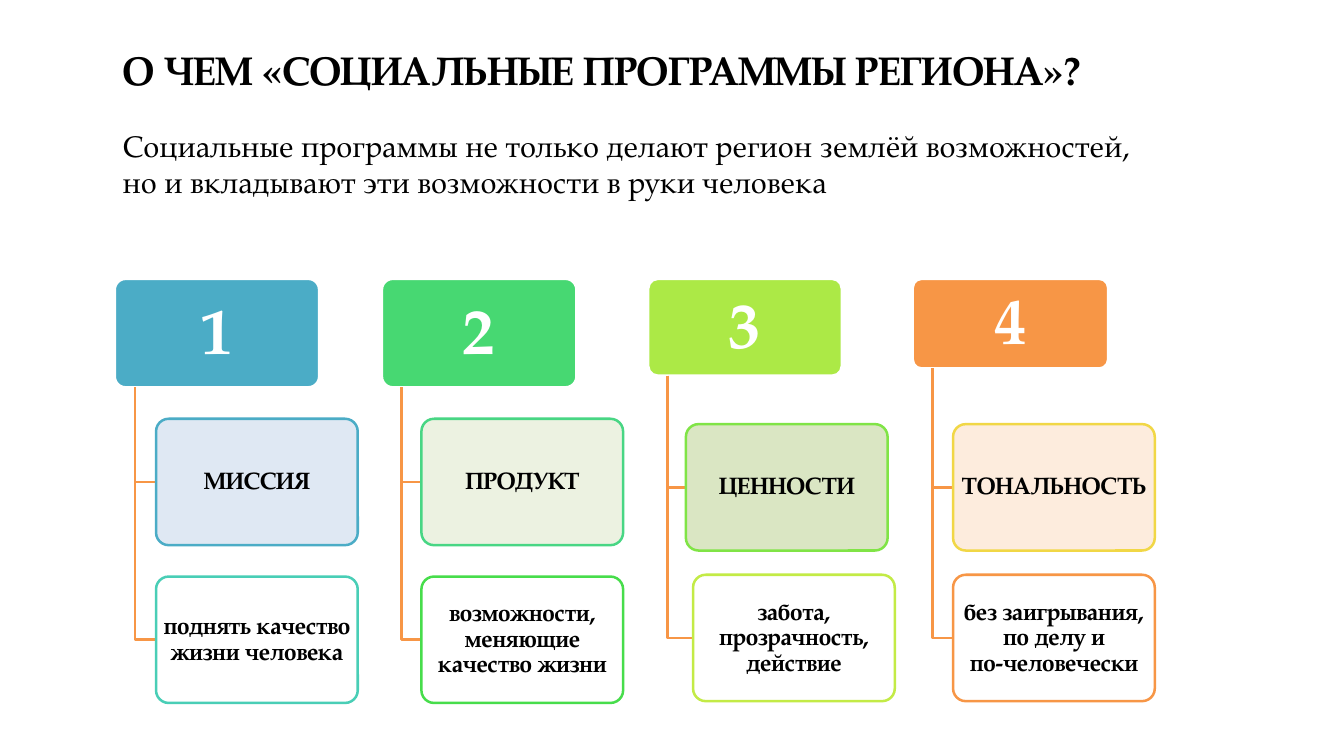
from typing import NamedTuple

from pptx import Presentation, util as u
from pptx.dml.color import RGBColor
from pptx.enum import shapes, text
from pptx.oxml.ns import qn
from lxml import etree

FONT = "TeX Gyre Pagella"
BLACK, WHITE, ORANGE = "000000", "FFFFFF", "F79646"
HEADER_TOP = 3.11
CARD_W, CARD_H = 2.25, 1.41


class Card(NamedTuple):
    left: float
    top: float
    fill: str
    line: str
    label: str


class Column(NamedTuple):
    left: float
    width: float
    height: float
    fill: str
    cards: tuple


COLUMNS = (
    Column(1.28, 2.28, 1.21, "4BACC6", (
        Card(1.74, 4.67, "DCE6F2", "4BACC6", "МИССИЯ"),
        Card(1.74, 6.43, WHITE, "49CEB6", "поднять качество жизни человека"))),
    Column(4.26, 2.17, 1.21, "47D872", (
        Card(4.7, 4.67, "EBF1DE", "48D684", "ПРОДУКТ"),
        Card(4.7, 6.43, WHITE, "47DD4B", "возможности, меняющие качество жизни"))),
    Column(7.23, 2.16, 1.08, "ACE946", (
        Card(7.65, 4.73, "D7E4BD", "80E446", "ЦЕННОСТИ"),
        Card(7.73, 6.41, WHITE, "C3EB46", "забота, прозрачность, действие"))),
    Column(10.18, 2.18, 1.0, ORANGE, (
        Card(10.63, 4.73, "FDEADA", "F1D746", "ТОНАЛЬНОСТЬ"),
        Card(10.63, 6.41, WHITE, ORANGE, "без заигрывания, по делу и\vпо-человечески"))),
)


def rgb(color):
    return RGBColor.from_string(color)


def write(frame, words, size, color=BLACK, bold=False, align=text.PP_ALIGN.LEFT,
          anchor=text.MSO_ANCHOR.TOP, insets=(0.1, 0.05), spacing=1.0, wrap=True):
    frame.word_wrap = wrap
    frame.auto_size = text.MSO_AUTO_SIZE.NONE
    frame.vertical_anchor = anchor
    frame.margin_left = frame.margin_right = u.Inches(insets[0])
    frame.margin_top = frame.margin_bottom = u.Inches(insets[1])
    frame.text = words
    for paragraph in frame.paragraphs:
        paragraph.alignment = align
        paragraph.line_spacing = spacing
        paragraph.space_before = u.Pt(0)
        for run in paragraph.runs:
            run.font.name = FONT
            run.font.size = u.Pt(size)
            run.font.bold = bold
            run.font.color.rgb = rgb(color)


def outline(shape, color):
    shape.shadow.inherit = False
    shape.line.color.rgb = rgb(color)
    shape.line.width = u.Pt(2)


def add_block(slide, box, words, fill, line, opacity=100, **fmt):
    block = slide.shapes.add_shape(
        shapes.MSO_SHAPE.ROUNDED_RECTANGLE, *map(u.Inches, box))
    block.adjustments[0] = 0.1
    block.fill.solid()
    block.fill.fore_color.rgb = rgb(fill)
    if opacity < 100:
        color = block.fill._xPr.find(qn("a:solidFill"))[0]
        etree.SubElement(color, qn("a:alpha")).set("val", str(opacity * 1000))
    outline(block, line)
    write(block.text_frame, words, bold=True, align=text.PP_ALIGN.CENTER,
          anchor=text.MSO_ANCHOR.MIDDLE, spacing=0.9, **fmt)


def add_branch(slide, x, top, end_x, end_y):
    builder = slide.shapes.build_freeform(u.Inches(x), u.Inches(top))
    corners = [(x, end_y), (end_x, end_y)]
    builder.add_line_segments(
        [(u.Inches(a), u.Inches(b)) for a, b in corners], close=False)
    branch = builder.convert_to_shape()
    branch.fill.background()
    outline(branch, ORANGE)


def add_heading(slide, left, top, width):
    # Title
    title = slide.shapes.title
    title.left, title.top = u.Inches(left), u.Inches(top)
    title.width, title.height = u.Inches(width), u.Inches(0.64)
    write(title.text_frame, "О ЧЕМ «СОЦИАЛЬНЫЕ ПРОГРАММЫ РЕГИОНА»?", size=32, bold=True)

    # Lead sentence
    lead = slide.shapes.add_textbox(
        u.Inches(left), u.Inches(top + 0.91), u.Inches(width), u.Inches(0.91))
    write(lead.text_frame,
          "Социальные программы не только делают регион землёй возможностей,\n"
          "но и вкладывают эти возможности в руки человека", size=24, wrap=False)


def add_column(slide, number, column):
    # Numbered header
    add_block(slide, (column.left, HEADER_TOP, column.width, column.height),
              str(number), column.fill, WHITE, size=52, color=WHITE,
              insets=(0.11, 0.07))
    # Cards hanging from the header
    stem = column.left + column.width / 10
    for card in column.cards:
        add_branch(slide, stem, HEADER_TOP + column.height,
                   card.left, card.top + CARD_H / 2)
        add_block(slide, (card.left, card.top, CARD_W, CARD_H), card.label,
                  card.fill, card.line, opacity=90, size=19, insets=(0.04, 0.03))


def main():
    deck = Presentation()
    deck.slide_width, deck.slide_height = u.Inches(14.99), u.Inches(8.42)
    slide = deck.slides.add_slide(deck.slide_layouts[5])
    add_heading(slide, 1.27, 0.46, 11.61)
    for number, column in enumerate(COLUMNS, 1):
        add_column(slide, number, column)
    deck.save("out.pptx")


if __name__ == "__main__":
    main()
